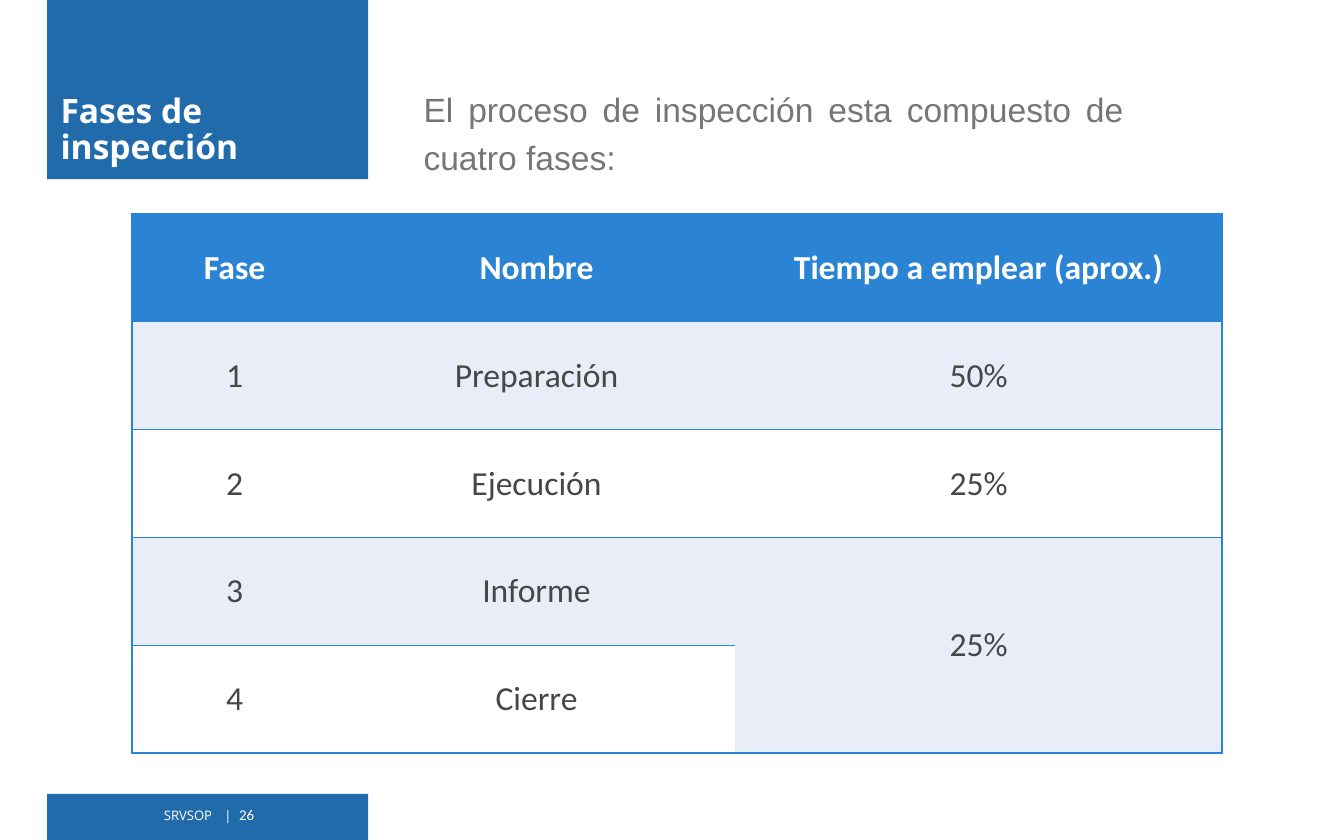
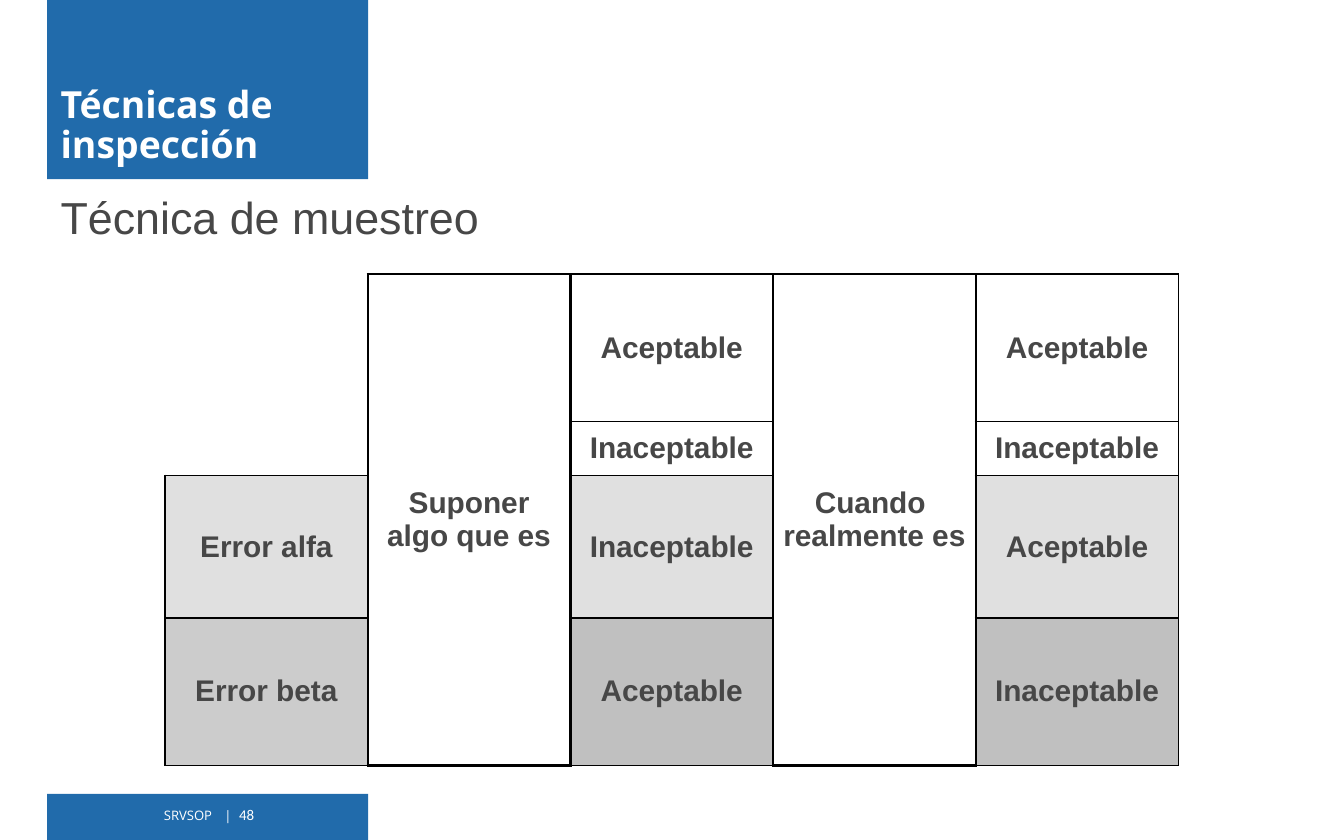
from dataclasses import dataclass
from typing import Optional

from lxml.etree import SubElement
from pptx import Presentation
from pptx.dml.color import RGBColor
from pptx.enum.shapes import MSO_SHAPE
from pptx.enum.text import MSO_ANCHOR, MSO_AUTO_SIZE, PP_ALIGN
from pptx.oxml.ns import qn
from pptx.util import Cm, Pt

# Colours and fonts
WHITE = RGBColor(0xFF, 0xFF, 0xFF)
BLACK = RGBColor(0x00, 0x00, 0x00)
BAND_BLUE = RGBColor(0x21, 0x6B, 0xAB)
TABLE_BLUE = RGBColor(0x2B, 0x84, 0xD3)
PALE_BLUE = RGBColor(0xE8, 0xED, 0xF7)
DARK_TEXT = RGBColor(0x47, 0x47, 0x47)
GREY_TEXT = RGBColor(0x76, 0x76, 0x76)
LIGHT_GREY = RGBColor(0xE0, 0xE0, 0xE0)
MID_GREY = RGBColor(0xCC, 0xCC, 0xCC)
DEEP_GREY = RGBColor(0xC0, 0xC0, 0xC0)
HEADING_FONT = "Open Sans"
BODY_FONT = "Arial"
TABLE_FONT = "Calibri"


@dataclass
class Box:
    """Place and size in centimetres."""
    left: float
    top: float
    width: float
    height: float


@dataclass
class TextStyle:
    font: str
    size: float
    color: RGBColor
    bold: bool = False


@dataclass
class Lead:
    """Introductory text of a slide."""
    text: str
    box: Box
    style: TextStyle
    line_spacing: float
    margin_top: float


@dataclass
class TableCell:
    """Border widths run left, right, top, bottom; 0 means no line."""
    text: str
    style: TextStyle
    borders: tuple[float, float, float, float]
    fill: Optional[RGBColor] = None
    row_span: int = 1


# Parts shared by the slides
BANDS = (Box(0.89, -0.02, 6.07, 3.41), Box(0.89, 15.01, 6.07, 0.88))
TITLE_BOX = Box(0.89, 0.18, 5.99, 3.1)
FOOTER_BOX = Box(2.69, 15.19, 2.39, 0.51)
FOOTER_TABS = (1.14, 1.42)


def place(shape, box: Box) -> None:
    shape.left, shape.top = Cm(box.left), Cm(box.top)
    shape.width, shape.height = Cm(box.width), Cm(box.height)


def style_font(font, style: TextStyle) -> None:
    font.name, font.size, font.bold = style.font, Pt(style.size), style.bold
    font.color.rgb = style.color


def fill_placeholder(shape, text: str, box: Box, style: TextStyle,
                     alignment: PP_ALIGN, line_spacing: float):
    place(shape, box)
    frame = shape.text_frame
    frame.text = text
    frame.word_wrap = True
    frame.auto_size = MSO_AUTO_SIZE.NONE
    paragraph = frame.paragraphs[0]
    properties = paragraph._p.get_or_add_pPr()
    properties.set("marL", "0")
    properties.set("indent", "0")
    SubElement(properties, qn("a:buNone"))
    paragraph.alignment = alignment
    paragraph.line_spacing = line_spacing
    paragraph.space_before = Pt(0)
    style_font(paragraph.runs[0].font, style)
    return frame


def add_footer(slide, number: int) -> None:
    box = FOOTER_BOX
    shape = slide.shapes.add_textbox(Cm(box.left), Cm(box.top), Cm(box.width), Cm(box.height))
    frame = shape.text_frame
    frame.word_wrap = True
    frame.vertical_anchor = MSO_ANCHOR.MIDDLE
    frame.margin_left = Cm(0.41)
    frame.margin_right = Cm(0)
    paragraph = frame.paragraphs[0]
    tabs = SubElement(paragraph._p.get_or_add_pPr(), qn("a:tabLst"))
    for position in FOOTER_TABS:
        SubElement(tabs, qn("a:tab"), pos=str(Cm(position)), algn="l")
    paragraph.line_spacing = 0.7
    for text, font, size in (("SRVSOP\t|\t", HEADING_FONT, 7), (str(number), TABLE_FONT, 8)):
        run = paragraph.add_run()
        run.text = text
        style_font(run.font, TextStyle(font, size, WHITE))


def add_content_slide(presentation, title: str, title_size: float, lead: Lead, number: int):
    slide = presentation.slides.add_slide(presentation.slide_layouts[1])
    heading, body = slide.shapes.title, slide.placeholders[1]
    # Bands lie behind the title
    for box in BANDS:
        band = slide.shapes.add_shape(MSO_SHAPE.RECTANGLE, 0, 0, 0, 0)
        place(band, box)
        band.shadow.inherit = False
        band.fill.solid()
        band.fill.fore_color.rgb = BAND_BLUE
        band.line.fill.background()
        heading.element.addprevious(band.element)
    title_style = TextStyle(HEADING_FONT, title_size, WHITE, True)
    frame = fill_placeholder(heading, title, TITLE_BOX, title_style, PP_ALIGN.LEFT, 0.9)
    frame.vertical_anchor = MSO_ANCHOR.BOTTOM
    frame = fill_placeholder(body, lead.text, lead.box, lead.style,
                             PP_ALIGN.JUSTIFY, lead.line_spacing)
    frame.vertical_anchor = MSO_ANCHOR.TOP
    frame.margin_top = Cm(lead.margin_top)
    add_footer(slide, number)
    return slide


def set_borders(cell, widths: tuple[float, ...], color: RGBColor) -> None:
    properties = cell._tc.get_or_add_tcPr()
    for side, width in zip("LRTB", widths):
        line = SubElement(properties, qn(f"a:ln{side}"), w=str(Pt(width)))
        if width:
            solid = SubElement(line, qn("a:solidFill"))
            SubElement(solid, qn("a:srgbClr"), val=str(color))
        else:
            SubElement(line, qn("a:noFill"))


def draw_cell(table, row: int, column: int, content: TableCell, border_color: RGBColor) -> None:
    left, right, top, bottom = content.borders
    last = row + content.row_span - 1
    cell = table.cell(row, column)
    if content.row_span > 1:
        cell.merge(table.cell(last, column))
    set_borders(cell, content.borders, border_color)
    for covered in range(row + 1, last + 1):
        widths = (left, right, 0, bottom if covered == last else 0)
        set_borders(table.cell(covered, column), widths, border_color)
    if content.fill is None:
        cell.fill.background()
    else:
        cell.fill.solid()
        cell.fill.fore_color.rgb = content.fill
    cell.vertical_anchor = MSO_ANCHOR.MIDDLE
    cell.margin_left = cell.margin_right = Cm(0.18)
    cell.margin_top = cell.margin_bottom = Cm(0)
    cell.text_frame.text = content.text
    paragraph = cell.text_frame.paragraphs[0]
    paragraph.alignment = PP_ALIGN.CENTER
    style_font(paragraph.font, content.style)
    for run in paragraph.runs:
        style_font(run.font, content.style)


def add_grid(slide, left: float, top: float, widths: list[float], heights: list[float],
             rows: list[list[Optional[TableCell]]], border_color: RGBColor) -> None:
    frame = slide.shapes.add_table(len(heights), len(widths), Cm(left), Cm(top),
                                   Cm(sum(widths)), Cm(sum(heights)))
    table = frame.table
    table.first_row = table.horz_banding = False
    for column, width in zip(table.columns, widths):
        column.width = Cm(width)
    for row, height in zip(table.rows, heights):
        row.height = Cm(height)
    for row_index, row in enumerate(rows):
        for column_index, content in enumerate(row):
            if content is not None:
                draw_cell(table, row_index, column_index, content, border_color)


def phase_rows() -> list[list[Optional[TableCell]]]:
    texts = [
        ("Fase", "Nombre", "Tiempo a emplear (aprox.)"),
        ("1", "Preparación", "50%"),
        ("2", "Ejecución", "25%"),
        ("3", "Informe", "25%"),
        ("4", "Cierre", None),
    ]
    header = TextStyle(TABLE_FONT, 18, WHITE, True)
    plain = TextStyle(TABLE_FONT, 18, DARK_TEXT)
    borders = ((1, 0, 1, 1), (0, 0, 1, 1), (0, 1, 1, 1))
    rows = []
    for index, row in enumerate(texts):
        fill = TABLE_BLUE if index == 0 else (WHITE, PALE_BLUE)[index % 2]
        style = header if index == 0 else plain
        rows.append([None if text is None else TableCell(text, style, edges, fill)
                     for text, edges in zip(row, borders)])
    rows[3][2].row_span = 2
    return rows


def sampling_rows() -> list[list[Optional[TableCell]]]:
    style = TextStyle(BODY_FONT, 16, DARK_TEXT, True)

    def error(text: str, fill: RGBColor) -> TableCell:
        return TableCell(text, style, (1, 1.5, 1, 1), fill)

    def assumed(text: str, fill: Optional[RGBColor] = None) -> TableCell:
        return TableCell(text, style, (1.5, 1.5, 1, 1), fill)

    def actual(text: str, fill: Optional[RGBColor] = None) -> TableCell:
        return TableCell(text, style, (1.5, 1, 1, 1), fill)

    def phrase(text: str) -> TableCell:
        return TableCell(text, style, (1.5,) * 4, row_span=4)

    corner = TableCell("", style, (0, 1.5, 0, 1), row_span=2)
    return [
        [corner, phrase("Suponer algo que es"), assumed("Aceptable"),
         phrase("Cuando \vrealmente es"), actual("Aceptable")],
        [None, None, assumed("Inaceptable"), None, actual("Inaceptable")],
        [error("Error alfa", LIGHT_GREY), None, assumed("Inaceptable", LIGHT_GREY),
         None, actual("Aceptable", LIGHT_GREY)],
        [error("Error beta", MID_GREY), None, assumed("Aceptable", DEEP_GREY),
         None, actual("Inaceptable", DEEP_GREY)],
    ]


def main() -> None:
    presentation = Presentation()
    presentation.slide_width, presentation.slide_height = Cm(25.4), Cm(15.88)

    # Inspection phases
    lead = Lead("El proceso de inspección esta compuesto de cuatro fases:",
                Box(7.75, 1.27, 13.74, 2.11), TextStyle(BODY_FONT, 18, GREY_TEXT), 1.2, 0.25)
    slide = add_content_slide(presentation, "Fases de inspección", 18, lead, 26)
    add_grid(slide, 2.49, 4.04, [3.89, 7.52, 9.19], [2.04] * 5, phase_rows(), TABLE_BLUE)

    # Sampling technique
    lead = Lead("Técnica de muestreo", Box(0.89, 3.38, 10.67, 1.7),
                TextStyle(BODY_FONT, 24, DARK_TEXT), 0.9, 0.32)
    slide = add_content_slide(presentation, "Técnicas de inspección", 20, lead, 48)
    add_grid(slide, 3.12, 5.18, [3.83] * 5, [2.79, 1.02, 2.69, 2.79], sampling_rows(), BLACK)

    presentation.save("out.pptx")


if __name__ == "__main__":
    main()
